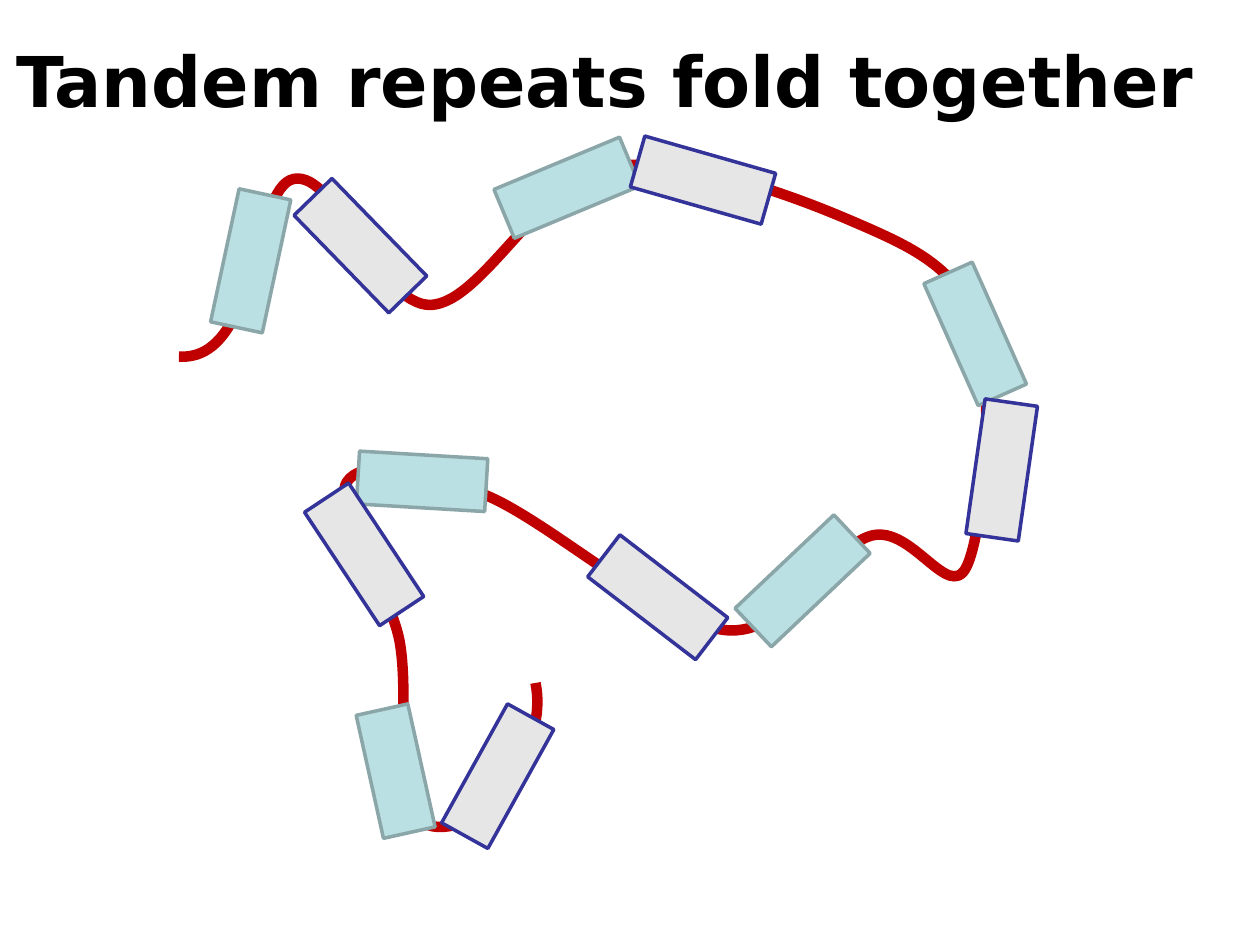
from dataclasses import dataclass

from lxml.etree import SubElement
from pptx import Presentation
from pptx.dml.color import RGBColor
from pptx.enum.shapes import MSO_SHAPE
from pptx.enum.text import MSO_ANCHOR, MSO_AUTO_SIZE, PP_ALIGN
from pptx.oxml.ns import qn
from pptx.util import Pt

SCALE = 9144


@dataclass(frozen=True)
class Theme:
    font: str = "DejaVu Sans"
    title_size: int = 40
    text: str = "000000"
    strand: str = "C00000"
    strand_width: int = 6
    first_fill: str = "BBE0E3"
    first_line: str = "8AA6A8"
    second_fill: str = "E6E6E6"
    second_line: str = "333399"
    repeat_width: int = 2


THEME = Theme()
REPEAT_HEIGHT = 42

STRAND_START = (0, 161)
STRAND_CURVES = [
    ((64, 165), (58, 27), (91, 20)),
    ((125, 13), (158, 121), (200, 120)),
    ((241, 118), (286, 22), (341, 11)),
    ((397, 0), (484, 32), (533, 53)),
    ((582, 74), (618, 90), (633, 136)),
    ((648, 182), (639, 300), (625, 328)),
    ((611, 356), (582, 295), (550, 303)),
    ((518, 311), (484, 384), (433, 378)),
    ((382, 372), (291, 289), (241, 270)),
    ((191, 250), (144, 242), (133, 261)),
    ((122, 281), (166, 343), (175, 386)),
    ((183, 429), (172, 497), (183, 520)),
    ((194, 542), (225, 536), (241, 520)),
    ((258, 503), (292, 465), (283, 420)),
]

FIRST_REPEATS = [
    (3, 64, 108, 282.1),
    (254, 6, 108, 337.4),
    (579, 122, 106, 66),
    (441, 318, 108, 136.6),
    (122, 469, 100, 257.5),
    (142, 239, 102, 3.4),
]
SECOND_REPEATS = [
    (90, 52, 108, 45.8),
    (362, 0, 108, 15.9),
    (599, 230, 108, 98.1),
    (326, 331, 108, 217.5),
    (93, 297, 108, 56.5),
    (199, 473, 108, 299),
]


def px(length):
    return length * SCALE


def set_line(shape, color, width):
    shape.shadow.inherit = False
    shape.line.color.rgb = RGBColor.from_string(color)
    shape.line.width = Pt(width)


def add_title(slide, box, text):
    title = slide.shapes.title
    title.left, title.top, title.width, title.height = map(px, box)
    frame = title.text_frame
    frame.text = text
    frame.word_wrap = False
    frame.auto_size = MSO_AUTO_SIZE.SHAPE_TO_FIT_TEXT
    frame.vertical_anchor = MSO_ANCHOR.MIDDLE
    paragraph = frame.paragraphs[0]
    paragraph.alignment = PP_ALIGN.CENTER
    paragraph.font.name = THEME.font
    paragraph.font.size = Pt(THEME.title_size)
    paragraph.font.bold = True
    paragraph.font.color.rgb = RGBColor.from_string(THEME.text)


def bend_segments(shape):
    path_element = next(shape.element.iter(qn("a:path")))
    segments = path_element.findall(qn("a:lnTo"))
    for start in range(0, len(segments), 3):
        curve = SubElement(path_element, qn("a:cubicBezTo"))
        for segment in segments[start:start + 3]:
            curve.append(segment[0])
            path_element.remove(segment)


def add_strand(slide, left, top):
    builder = slide.shapes.build_freeform(*STRAND_START, scale=SCALE)
    points = [point for curve in STRAND_CURVES for point in curve]
    builder.add_line_segments(points, close=False)
    strand = builder.convert_to_shape(px(left), px(top))
    bend_segments(strand)
    strand.fill.background()
    set_line(strand, THEME.strand, THEME.strand_width)


def add_repeats(slide, left, top, repeats, fill, line):
    for x, y, width, rotation in repeats:
        repeat = slide.shapes.add_shape(
            MSO_SHAPE.RECTANGLE,
            px(left + x), px(top + y), px(width), px(REPEAT_HEIGHT),
        )
        repeat.rotation = rotation
        repeat.fill.solid()
        repeat.fill.fore_color.rgb = RGBColor.from_string(fill)
        set_line(repeat, line, THEME.repeat_width)


def add_chain(slide, left, top):
    add_strand(slide, left, top)
    add_repeats(slide, left, top, FIRST_REPEATS,
                THEME.first_fill, THEME.first_line)
    add_repeats(slide, left, top, SECOND_REPEATS,
                THEME.second_fill, THEME.second_line)


def main():
    presentation = Presentation()
    presentation.slide_width = px(1000)
    presentation.slide_height = px(750)
    slide = presentation.slides.add_slide(presentation.slide_layouts[5])
    add_title(slide, (0, 25, 960, 77), "Tandem repeats fold together")
    add_chain(slide, 142, 122)
    presentation.save("out.pptx")


if __name__ == "__main__":
    main()
